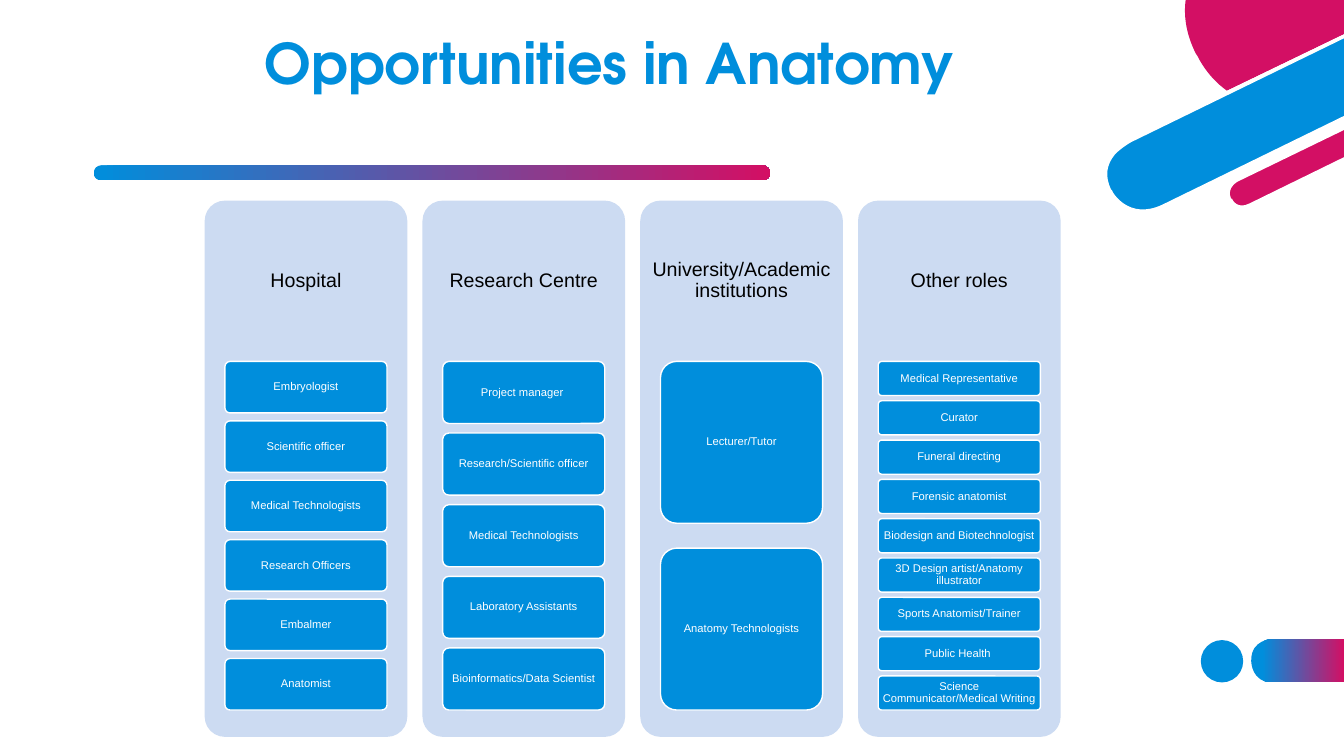
from lxml.etree import SubElement
from pptx import Presentation
from pptx.dml.color import RGBColor
from pptx.enum.shapes import MSO_SHAPE as Preset
from pptx.enum.text import MSO_ANCHOR as Anchor, MSO_AUTO_SIZE as AutoSize, PP_ALIGN as Align
from pptx.oxml.ns import qn
from pptx.util import Inches, Pt


class Theme:
    blue = RGBColor(0x00, 0x8E, 0xDC)
    pink = RGBColor(0xD3, 0x0F, 0x64)
    pale = RGBColor(0xCC, 0xDB, 0xF2)
    white = RGBColor(0xFF, 0xFF, 0xFF)
    black = RGBColor(0x00, 0x00, 0x00)
    title_font, body_font = "TeX Gyre Adventor", "Arial"
    title_size, heading_size, role_size = Pt(40), Pt(14), Pt(8)


def paint(shape, color, blend_start=None):
    """Fill without outline or shadow; blend_start makes it a blend into pink."""
    shape.shadow.inherit = False
    shape.line.fill.background()
    if blend_start is None:
        shape.fill.solid()
        shape.fill.fore_color.rgb = color
        return
    shape.fill.gradient()
    shape.fill.gradient_angle = 0
    for stop, place, tint in zip(shape.fill.gradient_stops, (blend_start, 1), (color, Theme.pink)):
        stop.position = place
        stop.color.rgb = tint


def trace(outline):
    """Closed outline: pairs are corners, sixes are Bezier curves."""
    corners = [(Inches(part[-2]), Inches(part[-1])) for part in outline]
    builder = page.shapes.build_freeform(*corners[0], scale=1.0)
    builder.add_line_segments(corners[1:], close=True)
    shape = builder.convert_to_shape()
    # Turn the sides that stand for curves into Bezier segments
    sides = list(shape._element.iter(qn("a:lnTo")))
    for side, part in zip(sides, outline[1:]):
        if len(part) == 6:
            side.tag = qn("a:cubicBezTo")
            for old in list(side):
                side.remove(old)
            for x, y in zip(part[::2], part[1::2]):
                SubElement(side, qn("a:pt"), x=str(Inches(x) - shape.left),
                           y=str(Inches(y) - shape.top))
    return shape


deck = Presentation()
deck.slide_width, deck.slide_height = Inches(13.33), Inches(7.5)
page = deck.slides.add_slide(deck.slide_layouts[5])

# Dot and blended tab at the lower right
dot = page.shapes.add_shape(Preset.OVAL, Inches(11.91), Inches(6.35), Inches(0.42), Inches(0.42))
paint(dot, Theme.blue)
tab = trace([(12.62, 6.77), (13.33, 6.77), (13.33, 6.34), (12.62, 6.34),
             (12.62, 6.34, 12.41, 6.34, 12.41, 6.55), (12.41, 6.56),
             (12.41, 6.56, 12.41, 6.77, 12.62, 6.77)])
paint(tab, Theme.blue, 0.12)

# Corner ornament: disc and two slanted bars with white edges
ornament = [
    (Theme.white, [(13.33, 0.81), (13.06, 0.94), (12.74, 1.1, 12.44, 1.08, 12.19, 0.89),
                   (11.99, 0.74, 11.89, 0.55, 11.89, 0.55), (11.88, 0.52),
                   (11.79, 0.34, 11.75, 0.16, 11.78, 0), (11.74, 0),
                   (11.71, 0.17, 11.75, 0.35, 11.84, 0.54), (11.86, 0.57),
                   (11.86, 0.58, 11.96, 0.77, 12.16, 0.92),
                   (12.28, 1.01, 12.44, 1.09, 12.65, 1.09),
                   (12.77, 1.09, 12.91, 1.06, 13.08, 0.98), (13.33, 0.86)]),
    (Theme.blue, [(11.21, 1.39), (11.21, 1.39, 10.85, 1.57, 11.01, 1.89), (11.01, 1.9),
                  (11.01, 1.9, 11.17, 2.22, 11.54, 2.04), (13.33, 1.17), (13.33, 0.36)]),
    (Theme.pink, [(11.88, 0.56), (11.88, 0.56, 11.97, 0.76, 12.17, 0.9), (13.33, 0.34),
                  (13.33, 0), (11.76, 0), (11.74, 0.15, 11.76, 0.33, 11.86, 0.53)]),
    (Theme.pink, [(13.33, 1.26), (12.27, 1.78), (12.27, 1.78, 12.13, 1.85, 12.2, 1.97),
                  (12.2, 1.98), (12.2, 1.98, 12.26, 2.11, 12.4, 2.04), (13.33, 1.58)]),
    (Theme.white, [(12.39, 2.02), (12.27, 2.08, 12.22, 1.98, 12.22, 1.97), (12.21, 1.97),
                   (12.16, 1.86, 12.28, 1.8, 12.28, 1.8), (13.33, 1.29), (13.33, 1.24),
                   (12.26, 1.76), (12.26, 1.76, 12.19, 1.8, 12.17, 1.87),
                   (12.15, 1.91, 12.16, 1.95, 12.18, 1.99),
                   (12.2, 2.03, 12.25, 2.08, 12.32, 2.08),
                   (12.35, 2.08, 12.38, 2.08, 12.41, 2.06), (13.33, 1.61), (13.33, 1.56)]),
    (Theme.white, [(11.53, 2.03), (11.19, 2.19, 11.03, 1.9, 11.03, 1.89), (11.02, 1.88),
                   (10.96, 1.75, 10.97, 1.64, 11.06, 1.53),
                   (11.13, 1.46, 11.22, 1.41, 11.22, 1.41), (13.33, 0.38), (13.33, 0.34),
                   (11.2, 1.37), (11.19, 1.38, 11.02, 1.46, 10.96, 1.63),
                   (10.93, 1.71, 10.94, 1.8, 10.99, 1.9), (10.99, 1.91),
                   (10.99, 1.91, 11.1, 2.12, 11.33, 2.12),
                   (11.39, 2.12, 11.46, 2.1, 11.54, 2.06), (13.33, 1.19), (13.33, 1.15)]),
]
for color, outline in ornament:
    paint(trace(outline), color)

# Blended rule under the title
rule = trace([(7.56, 1.79), (1.01, 1.79), (0.96, 1.79, 0.93, 1.76, 0.93, 1.72),
              (0.93, 1.67, 0.96, 1.64, 1.01, 1.64), (7.56, 1.64),
              (7.6, 1.64, 7.64, 1.67, 7.64, 1.72), (7.64, 1.76, 7.6, 1.79, 7.56, 1.79)])
paint(rule, Theme.blue, 0)

# Title
title = page.shapes.title
title.left, title.top, title.width, title.height = map(Inches, (2.52, 0.14, 9.9, 1.03))
frame = title.text_frame
frame.auto_size, frame.word_wrap, frame.vertical_anchor = AutoSize.NONE, True, Anchor.MIDDLE
para = frame.paragraphs[0]
para.alignment, para.line_spacing = Align.LEFT, 0.9
span = para.add_run()
span.text = "Opportunities in Anatomy"
span.font.name, span.font.size, span.font.bold = Theme.title_font, Theme.title_size, True
span.font.color.rgb = Theme.blue

# Career columns: a panel with its heading, then its roles
careers = {
    "Hospital": ["Embryologist", "Scientific officer", "Medical Technologists",
                 "Research Officers", "Embalmer", "Anatomist"],
    "Research Centre": ["Project manager ", "Research/Scientific officer",
                        "Medical Technologists", "Laboratory Assistants",
                        "Bioinformatics/Data Scientist"],
    "University/Academic institutions": ["Lecturer/Tutor", "Anatomy Technologists"],
    "Other roles": ["Medical Representative", "Curator", "Funeral directing",
                    "Forensic anatomist", "Biodesign and Biotechnologist",
                    "3D Design artist/Anatomy illustrator", "Sports Anatomist/Trainer",
                    "Public Health ", "Science Communicator/Medical Writing"],
}
first_left, column_pitch = 2.03, 2.16
panel_top, panel_width, panel_height = 1.99, 2.01, 5.32
heading_height = 0.3 * panel_height
roles_top, roles_height = panel_top + heading_height, 0.65 * panel_height
gap_share = 2 / 13  # gap between roles, as a share of a role's height

for column, (heading, roles) in enumerate(careers.items()):
    left = first_left + column * column_pitch
    panel = page.shapes.add_shape(Preset.ROUNDED_RECTANGLE, Inches(left), Inches(panel_top),
                                  Inches(panel_width), Inches(panel_height))
    panel.adjustments[0] = 0.1
    paint(panel, Theme.pale)
    heading_box = page.shapes.add_textbox(Inches(left), Inches(panel_top),
                                          Inches(panel_width), Inches(heading_height))
    labels = [(heading_box, heading, 0.06, Theme.heading_size, Theme.black)]

    role_height = roles_height / (len(roles) + (len(roles) - 1) * gap_share)
    for row, role in enumerate(roles):
        role_top = roles_top + row * role_height * (1 + gap_share)
        role_box = page.shapes.add_shape(
            Preset.ROUNDED_RECTANGLE, Inches(left + 0.1 * panel_width), Inches(role_top),
            Inches(0.8 * panel_width), Inches(role_height))
        role_box.adjustments[0] = 0.1
        paint(role_box, Theme.blue)
        role_box.line.color.rgb, role_box.line.width = Theme.white, Pt(1)
        labels.append((role_box, role, 0.02, Theme.role_size, Theme.white))

    for box, words, inset, size, color in labels:
        frame = box.text_frame
        frame.word_wrap, frame.vertical_anchor = True, Anchor.MIDDLE
        frame.margin_left = frame.margin_right = Inches(inset)
        frame.margin_top = frame.margin_bottom = Inches(inset)
        para = frame.paragraphs[0]
        para.alignment, para.line_spacing = Align.CENTER, 0.9
        span = para.add_run()
        span.text = words
        span.font.name, span.font.size = Theme.body_font, size
        span.font.color.rgb = color

deck.save("out.pptx")
